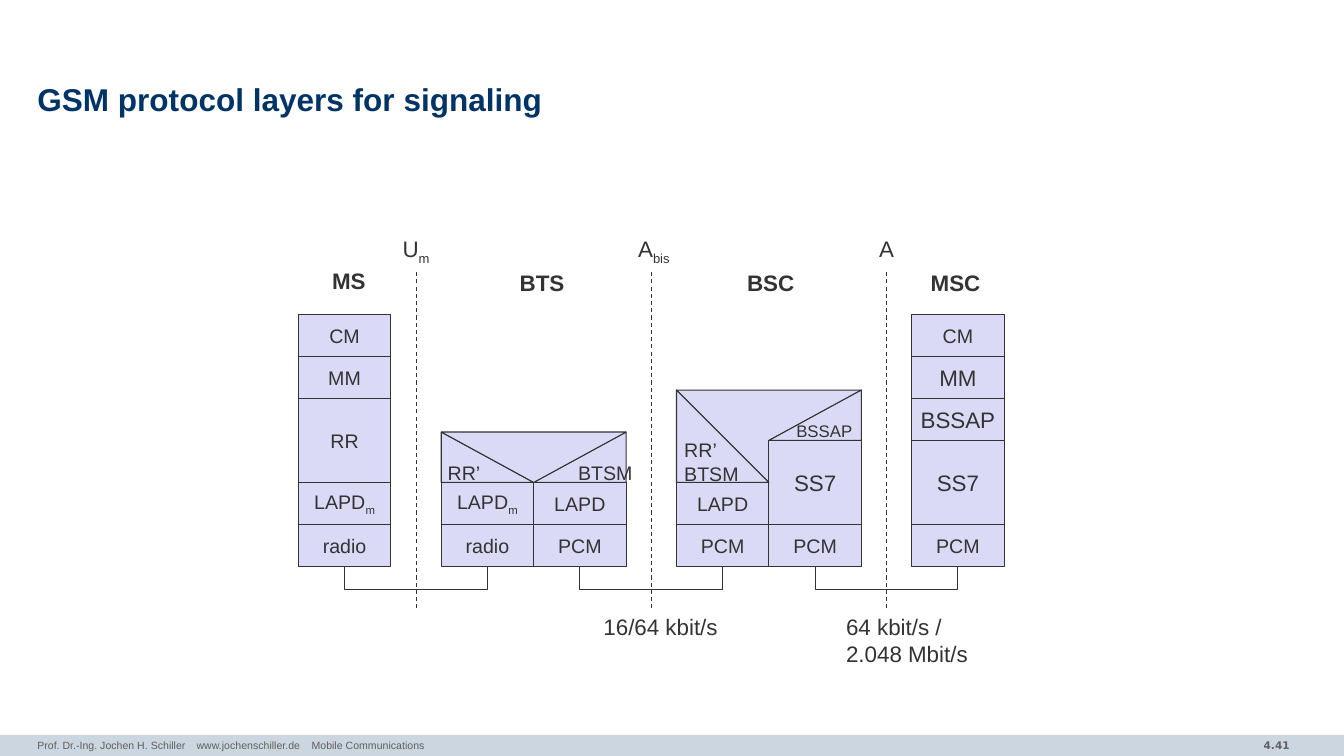
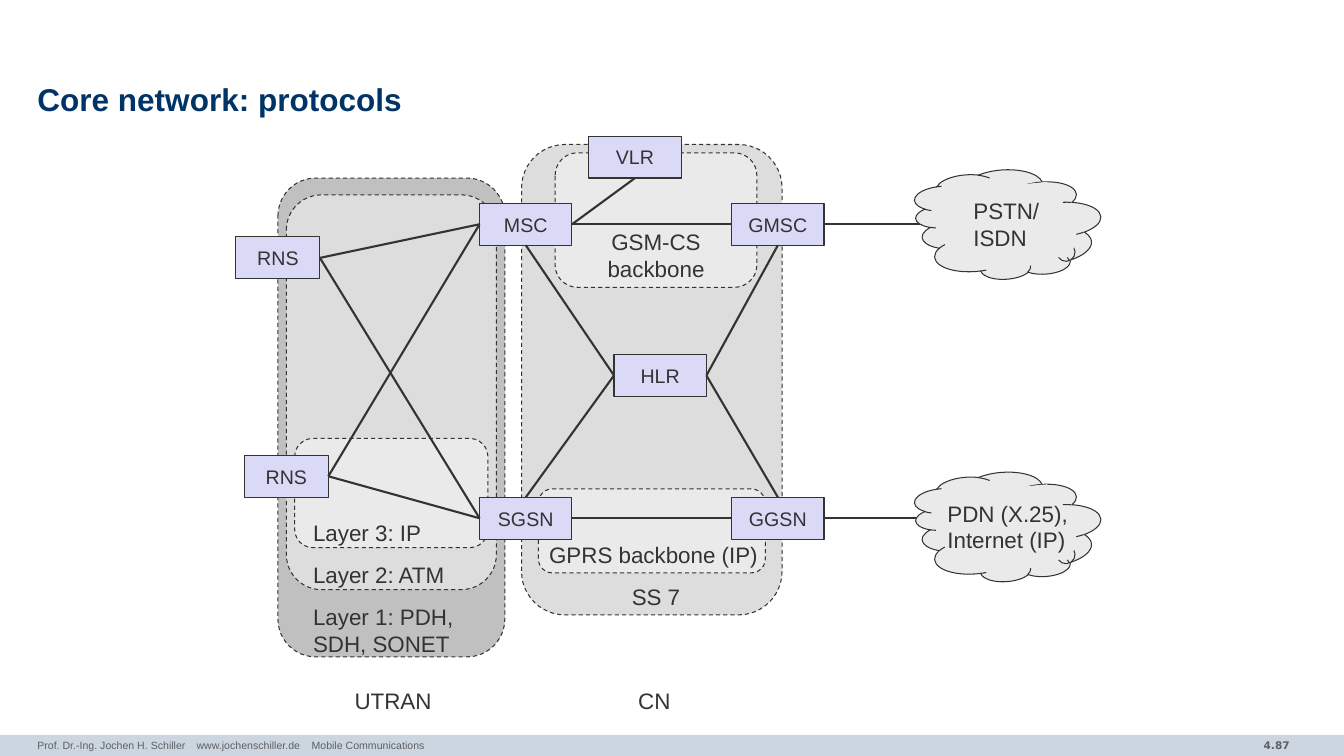
from lxml.etree import SubElement
from pptx import Presentation
from pptx.dml.color import RGBColor
from pptx.enum.dml import MSO_LINE
from pptx.enum.shapes import MSO_CONNECTOR as LINK, MSO_SHAPE as SHAPE
from pptx.enum.text import MSO_ANCHOR as ANCHOR, MSO_AUTO_SIZE as FIT, PP_ALIGN as ALIGN
from pptx.oxml.ns import qn
from pptx.util import Emu, Inches, Pt

COLORS = {"band": "CCD6E0", "footer": "5F5F5F", "title": "003366", "ink": "333333",
          "box": "DADAF6", "dark": "C0C0C0", "mid": "DDDDDD", "light": "EAEAEA"}
WIDTH, HEIGHT = 13.33, 7.5
UNIT = 1 / 12
BOX_W, ROW_H = 11, 5
TOP, LEFT, BOTTOM, RIGHT = range(4)
FOOTER = ["Prof. Dr.-Ing. Jochen H. Schiller", "www.jochenschiller.de", "Mobile Communications"]
FOOTER_TABS = [1.58, 2.72]

LAYERS = {
    "title": "GSM protocol layers for signaling", "page": "4.41", "origin": (2.96, 3.12),
    "stacks": {
        0: [("CM", 0, 1, 14), ("MM", 5, 1, 14), ("RR", 10, 2, 14), ("LAPD_m", 20, 1, 14), ("radio", 25, 1, 14)],
        17: [("LAPD_m", 20, 1, 14), ("radio", 25, 1, 14)],
        28: [("LAPD", 20, 1, 14), ("PCM", 25, 1, 14)],
        45: [("LAPD", 20, 1, 14), ("PCM", 25, 1, 14)],
        56: [("SS7", 15, 2, 16), ("PCM", 25, 1, 14)],
        73: [("CM", 0, 1, 14), ("MM", 5, 1, 16), ("BSSAP", 10, 1, 16), ("SS7", 15, 2, 16), ("PCM", 25, 1, 14)],
    },
    "relay": [(67, 9), (45, 9), (56, 20), (56, 15)],
    "corners": [
        ("RR’", 17, 14, 6, False, 14, ALIGN.CENTER, (0.02, 0.18)),
        ("BTSM", 28, 14, 6, True, 14, ALIGN.CENTER, (0.3, 0.1)),
        ("RR’\nBTSM", 45, 9, 11, False, 14, ALIGN.LEFT, (0, 0.1)),
        ("BSSAP", 56, 9, 6, True, 12, ALIGN.CENTER, (0.1, 0.22)),
    ],
    "wires": [(0, 17), (28, 45), (56, 73)],
    "interfaces": [14, 42, 70],
    "labels": [
        ("U_m", 14, -10, ALIGN.CENTER), ("A_bis", 42.3, -10, ALIGN.CENTER), ("A", 70, -10, ALIGN.CENTER),
        ("16/64 kbit/s", 43.1, 35, ALIGN.CENTER), ("64 kbit/s /\n2.048 Mbit/s", 64, 35, ALIGN.LEFT),
    ],
    "stations": [("MS", 6, -6.2), ("BTS", 29, -6), ("BSC", 56.2, -6), ("MSC", 78.2, -6)],
}

CORE = {
    "title": "Core network: protocols", "page": "4.87", "origin": (2.34, 1.35),
    "zones": [(34, 1, 31, 56, "mid"), (5, 5, 27, 57, "dark"), (6, 7, 25, 47, "mid"),
              (38, 2, 24, 16, "light"), (7, 36, 23, 13, "light"), (36, 42, 27, 10, "light")],
    "nodes": {"RNS 1": (0, 12, 10), "RNS 2": (1, 38, 10), "MSC": (29, 8, 11), "SGSN": (29, 43, 11),
              "GMSC": (59, 8, 11), "GGSN": (59, 43, 11), "HLR": (45, 26, 11), "VLR": (42, 0, 11)},
    "links": [
        ("RNS 1", RIGHT, "MSC", LEFT), ("RNS 1", RIGHT, "SGSN", LEFT),
        ("RNS 2", RIGHT, "MSC", LEFT), ("RNS 2", RIGHT, "SGSN", LEFT),
        ("MSC", RIGHT, "GMSC", LEFT), ("SGSN", RIGHT, "GGSN", LEFT), ("MSC", RIGHT, "VLR", BOTTOM),
        ("MSC", BOTTOM, "HLR", LEFT), ("SGSN", TOP, "HLR", LEFT),
        ("GMSC", BOTTOM, "HLR", RIGHT), ("GGSN", TOP, "HLR", RIGHT),
    ],
    "clouds": [("PSTN/\nISDN", "GMSC", 86.6, -0.5), ("PDN (X.25),\nInternet (IP)", "GGSN", 83.5, 35.5)],
    "labels": [
        ("Layer 1: PDH,\nSDH, SONET", 8, 55, ALIGN.LEFT), ("Layer 2: ATM", 8, 50, ALIGN.LEFT),
        ("Layer 3: IP", 8, 45, ALIGN.LEFT), ("GPRS backbone (IP)", 49.7, 47.6, ALIGN.CENTER),
        ("SS 7", 50, 52.6, ALIGN.CENTER), ("GSM-CS\nbackbone", 50, 10.4, ALIGN.CENTER),
        ("UTRAN", 18.7, 65, ALIGN.CENTER), ("CN", 49.8, 65, ALIGN.CENTER),
    ],
}
CLOUD_PARTS = [
    (SHAPE.CLOUD_CALLOUT, 0, 0, 13, 22, 266.1, "ink"),
    (SHAPE.OVAL, 9.2, 9.8, 3.5, 7.3, 262.1, "light"),
    (SHAPE.RECTANGLE, 7.4, 4.1, 1.6, 6, 264.7, "light"),
]


def rgb(name):
    return RGBColor.from_string(COLORS[name])


def apply(target, **values):
    for key, value in values.items():
        setattr(target, key, value)


def inches(*lengths):
    return [Inches(length) for length in lengths]


def cell(origin, col, row, cols, rows):
    return inches(origin[0] + col * UNIT, origin[1] + row * UNIT, cols * UNIT, rows * UNIT)


def write(frame, text, size, align=ALIGN.LEFT, color="ink", bold=False, font="Arial", **layout):
    apply(frame, **{"word_wrap": True, **layout})
    for index, line in enumerate(text.split("\n")):
        paragraph = frame.add_paragraph() if index else frame.paragraphs[0]
        paragraph.alignment = align
        for depth, piece in enumerate(line.split("_")):
            run = paragraph.add_run()
            run.text = piece
            apply(run.font, name=font, size=Pt(size), bold=bold)
            run.font.color.rgb = rgb(color)
            if depth:
                run._r.get_or_add_rPr().set("baseline", "-25000")


def paint(shape, fill, line="ink", dashed=False):
    shape.shadow.inherit = False
    shape.fill.solid()
    shape.fill.fore_color.rgb = rgb(fill)
    stroke(shape, line, 0.75, dashed)
    return shape


def stroke(shape, color, width, dashed=False):
    shape.line.color.rgb = rgb(color)
    shape.line.width = Pt(width)
    if dashed:
        shape.line.dash_style = MSO_LINE.DASH


def flip(shape, axis):
    shape._element.spPr.find(qn("a:xfrm")).set(axis, "1")


def connect(shapes, kind, start, end, width, dashed=False):
    connector = shapes.add_connector(kind, *inches(*start, *end))
    stroke(connector, "ink", width, dashed)
    SubElement(connector._element.spPr, qn("a:effectLst"))
    return connector


def add_box(shapes, text, place, size=14):
    box = paint(shapes.add_shape(SHAPE.RECTANGLE, *place), "box")
    write(box.text_frame, text, size, ALIGN.CENTER, word_wrap=False, vertical_anchor=ANCHOR.MIDDLE)
    return box


def add_label(shapes, origin, text, col, row, align=ALIGN.CENTER, bold=False, cols=30):
    left = col - cols / 2 if align == ALIGN.CENTER else col
    rows = 4.4 + 3.3 * text.count("\n")
    label = shapes.add_textbox(*cell(origin, left, row, cols, rows))
    write(label.text_frame, text, 16, align, bold=bold)


def add_slide(deck, content):
    slide = deck.slides.add_slide(deck.slide_layouts[5])
    shapes = slide.shapes
    title = shapes.title
    apply(title, **dict(zip(("left", "top", "width", "height"), inches(0.37, 0.78, 12.6, 0.47))))
    write(title.text_frame, content["title"], 22.5, color="title", bold=True, auto_size=FIT.NONE,
          vertical_anchor=ANCHOR.MIDDLE, margin_left=0, margin_right=0, margin_top=0, margin_bottom=0)
    title.text_frame.paragraphs[0].line_spacing = 0.85
    band = paint(shapes.add_shape(SHAPE.RECTANGLE, *inches(0, HEIGHT - 0.21, WIDTH, 0.21)), "band")
    band.line.fill.background()
    page = shapes.add_textbox(*inches(11.1, 7.28, 1.79, 0.23))
    write(page.text_frame, content["page"], 7.5, ALIGN.RIGHT, "footer", True, "DejaVu Sans")
    footer = shapes.add_textbox(*inches(0.37, 7.28, 8.72, 0.22)).text_frame
    tabs = SubElement(footer.paragraphs[0]._p.get_or_add_pPr(), qn("a:tabLst"))
    for stop in FOOTER_TABS:
        SubElement(tabs, qn("a:tab"), pos=str(Inches(stop)), algn="l")
    write(footer, "\t".join(FOOTER), 7.5, color="footer", margin_left=0, margin_right=0)
    return shapes


def add_wire(shapes, sender, receiver):
    wire = connect(shapes, LINK.ELBOW, (0, 0), (0, 0), 0.75)
    wire.begin_connect(sender, BOTTOM)
    wire.end_connect(receiver, BOTTOM)
    span, thin, drop = receiver.left - sender.left, 1588, Inches(0.25)
    middle = sender.left + (sender.width + span) // 2
    apply(wire, left=Emu(middle - thin // 2), width=Emu(thin), height=Emu(span),
          top=Emu(sender.top + sender.height - span // 2))
    wire._element.spPr.find(qn("a:xfrm")).set("rot", "16200000")
    flip(wire, "flipH")
    geometry = wire._element.spPr.find(qn("a:prstGeom"))
    geometry.set("prst", "bentConnector3")
    guides = geometry.find(qn("a:avLst"))
    if guides is None:
        guides = SubElement(geometry, qn("a:avLst"))
    SubElement(guides, qn("a:gd"), name="adj1", fmla=f"val {drop * 100000 // thin}")


def build_layers(deck):
    shapes, origin = add_slide(deck, LAYERS), LAYERS["origin"]
    points = [cell(origin, col, row, 0, 0)[:2] for col, row in LAYERS["relay"]]
    outline = shapes.build_freeform(*points[0])
    outline.add_line_segments(points[1:], close=True)
    paint(outline.convert_to_shape(), "box")
    base = {}
    for col, stack in LAYERS["stacks"].items():
        for text, row, rows, size in stack:
            base[col] = add_box(shapes, text, cell(origin, col, row, BOX_W, rows * ROW_H), size)
    for text, col, row, rows, mirrored, size, align, (left, right) in LAYERS["corners"]:
        corner = paint(shapes.add_shape(SHAPE.RIGHT_TRIANGLE, *cell(origin, col, row, BOX_W, rows)), "box")
        if mirrored:
            flip(corner, "flipH")
        write(corner.text_frame, text, size, align, word_wrap=False, vertical_anchor=ANCHOR.MIDDLE,
              margin_left=Inches(left), margin_right=Inches(right), margin_bottom=0)
    funnel = shapes.add_shape(SHAPE.ISOSCELES_TRIANGLE, *cell(origin, 17, 14, 2 * BOX_W, 6))
    flip(paint(funnel, "box"), "flipV")
    for sender, receiver in LAYERS["wires"]:
        add_wire(shapes, base[sender], base[receiver])
    for col in LAYERS["interfaces"]:
        x = origin[0] + col * UNIT
        connect(shapes, LINK.STRAIGHT, (x, origin[1] + 35 * UNIT), (x, origin[1] - 5 * UNIT), 0.75, True)
    for label in LAYERS["labels"]:
        add_label(shapes, origin, *label)
    for station in LAYERS["stations"]:
        add_label(shapes, origin, *station, bold=True)


def add_cloud(shapes, origin, text, text_col, row):
    group = shapes.add_group_shape().shapes
    for kind, col, drop, cols, rows, angle, line in CLOUD_PARTS:
        part = group.add_shape(kind, *cell(origin, 85.4 + col, row + drop, cols, rows))
        paint(part, "light", line).rotation = angle
        if kind == SHAPE.CLOUD_CALLOUT:
            part.adjustments[0], part.adjustments[1] = -0.151, 0.157
    add_label(group, origin, text, text_col, row + 7.2, ALIGN.LEFT, cols=18)


def build_core(deck):
    shapes, origin = add_slide(deck, CORE), CORE["origin"]
    for *place, fill in CORE["zones"]:
        paint(shapes.add_shape(SHAPE.ROUNDED_RECTANGLE, *cell(origin, *place)), fill, dashed=True)
    nodes = {name: add_box(shapes, name.split()[0], cell(origin, col, row, cols, ROW_H))
             for name, (col, row, cols) in CORE["nodes"].items()}
    for source, source_side, target, target_side in CORE["links"]:
        link = connect(shapes, LINK.STRAIGHT, (0, 0), (0, 0), 1.5)
        link.begin_connect(nodes[source], source_side)
        link.end_connect(nodes[target], target_side)
    for text, gateway, text_col, row in CORE["clouds"]:
        node = nodes[gateway]
        y = (node.top + node.height / 2) / Inches(1)
        uplink = connect(shapes, LINK.STRAIGHT, (8.17, y), (9.2, y), 1.5)
        uplink.begin_connect(node, RIGHT)
        add_cloud(shapes, origin, text, text_col, row)
    for label in CORE["labels"]:
        add_label(shapes, origin, *label)


def main():
    """Build the two mobile communications slides."""
    deck = Presentation()
    apply(deck, slide_width=Inches(WIDTH), slide_height=Inches(HEIGHT))
    build_layers(deck)
    build_core(deck)
    deck.save("out.pptx")


if __name__ == "__main__":
    main()
